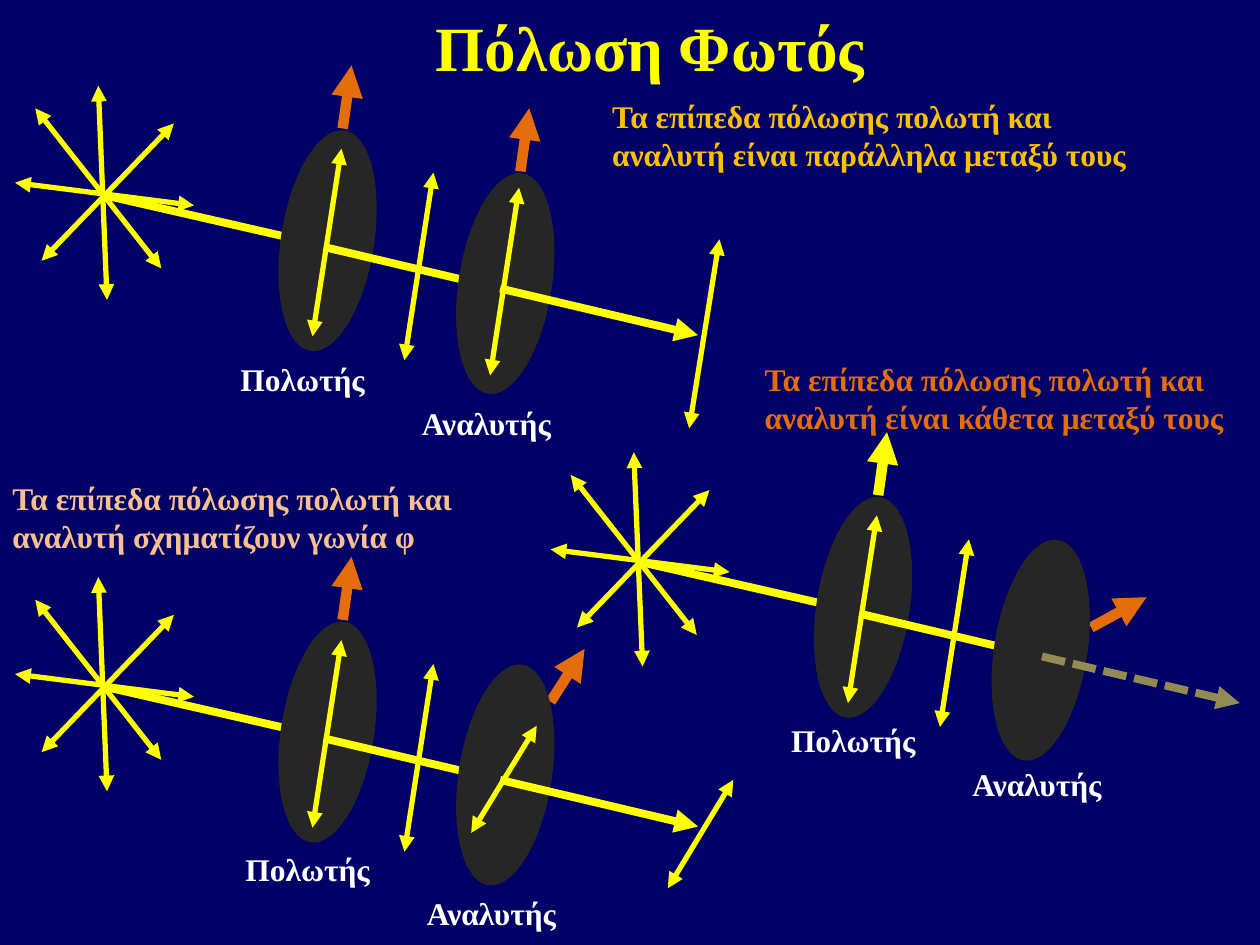
"""Build a slide on light polarization with three polarizer and analyzer setups."""
from lxml.etree import SubElement
from pptx import Presentation
from pptx.dml.color import RGBColor
from pptx.enum.dml import MSO_LINE
from pptx.enum.shapes import MSO_CONNECTOR, MSO_SHAPE
from pptx.enum.text import MSO_AUTO_SIZE, PP_ALIGN
from pptx.oxml.ns import qn
from pptx.util import Cm, Pt

NAVY = RGBColor(0x00, 0x00, 0x66)
YELLOW = RGBColor(0xFF, 0xFF, 0x00)
GOLD = RGBColor(0xFF, 0xC0, 0x00)
ORANGE = RGBColor(0xE4, 0x6C, 0x0A)
PEACH = RGBColor(0xFA, 0xC0, 0x90)
OLIVE = RGBColor(0x94, 0x8A, 0x54)
CHARCOAL = RGBColor(0x26, 0x26, 0x26)
WHITE = RGBColor(0xFF, 0xFF, 0xFF)
FONT = "Times New Roman"
CM_PER_UNIT = 2.54

TITLE = ("Πόλωση Φωτός", 0.91, -0.03, 8.5, 0.63)
CAPTIONS = [
    ("Τα επίπεδα πόλωσης πολωτή και αναλυτή είναι παράλληλα μεταξύ τους", 4.76, 0.72, 4.39, GOLD),
    ("Τα επίπεδα πόλωσης πολωτή και αναλυτή είναι κάθετα μεταξύ τους", 5.97, 2.81, 4.07, ORANGE),
    ("Τα επίπεδα πόλωσης πολωτή και αναλυτή σχηματίζουν γωνία φ", 0, 3.75, 3.87, PEACH),
]
LABELS = [("Πολωτής", 1.81, 2.81, 1.2), ("Αναλυτής", 3.25, 3.16, 1.24)]

RAYS = [
    (0.12, 1.45, 1.54, 1.63),
    (0.28, 0.86, 1.28, 2.13),
    (0.33, 2.07, 1.38, 0.98),
    (0.78, 0.68, 0.85, 2.38),
]
SOURCE_BEAM = (0.83, 1.55, 2.58, 1.95)
MIDDLE_BEAM = (2.57, 1.96, 4.14, 2.33)
FINAL_BEAM = (3.97, 2.29, 5.54, 2.66)
POLARIZER_AXIS = (2.72, 1.02, 2.79, 0.52)
POLARIZER_WAVE = (2.71, 1.18, 2.48, 2.67)
MIDDLE_WAVE = (3.44, 1.37, 3.21, 2.86)
POLARIZER_CENTER = (2.6, 1.91)
ANALYZER_CENTER = (4.01, 2.25)
DISC_SIZE = (0.74, 1.77)
DISC_TILT = 8.8

SETUPS = [
    {
        "origin": (0, 0), "label_shift": (0, 0), "axis_color": ORANGE,
        "analyzer_axis": (4.13, 1.36, 4.2, 0.86),
        "final_beam": FINAL_BEAM, "beam_format": {"color": YELLOW},
        "waves": [(4.12, 1.49, 3.89, 2.98), (5.71, 1.9, 5.47, 3.4)],
    },
    {
        "origin": (0, 3.9), "label_shift": (0.04, -0.01), "axis_color": ORANGE,
        "analyzer_axis": (4.37, 1.67, 4.64, 1.25),
        "final_beam": FINAL_BEAM, "beam_format": {"color": YELLOW},
        "waves": [(4.26, 1.86, 3.74, 2.71), (5.82, 2.29, 5.3, 3.15)],
    },
    {
        "origin": (4.25, 2.91), "label_shift": (0.12, -0.05), "axis_color": YELLOW,
        "analyzer_axis": (4.41, 2.07, 4.85, 1.83),
        "final_beam": (4.02, 2.3, 5.59, 2.67),
        "beam_format": {"color": OLIVE, "dash": MSO_LINE.SQUARE_DOT},
        "waves": [],
    },
]


def length(units):
    return Cm(units * CM_PER_UNIT)


def apply(target, values):
    for name, value in values.items():
        setattr(target, name, value)


def add_text(page, text, left, top, width, height, color, size=18, **frame_format):
    box = page.shapes.add_textbox(*map(length, (left, top, width, height)))
    apply(box.text_frame, {"word_wrap": True, **frame_format})
    para = box.text_frame.paragraphs[0]
    span = para.add_run()
    span.text = text
    apply(span.font, {"name": FONT, "size": Pt(size), "bold": True})
    span.font.color.rgb = color
    return para


def add_arrow(page, ends, origin, width, color=YELLOW, both=False, dash=None):
    x, y = origin
    x1, y1, x2, y2 = ends
    points = map(length, (x + x1, y + y1, x + x2, y + y2))
    arrow = page.shapes.add_connector(MSO_CONNECTOR.STRAIGHT, *points)
    arrow.line.color.rgb = color
    apply(arrow.line, {"width": Pt(width), "dash_style": dash})
    outline = arrow.line._get_or_add_ln()
    for tag in ("a:headEnd", "a:tailEnd") if both else ("a:tailEnd",):
        SubElement(outline, qn(tag), type="triangle")
    SubElement(arrow._element.spPr, qn("a:effectLst"))


def add_disc(page, center, origin):
    corner = [o + c - s / 2 for o, c, s in zip(origin, center, DISC_SIZE)]
    disc = page.shapes.add_shape(MSO_SHAPE.OVAL, *map(length, (*corner, *DISC_SIZE)))
    disc.rotation = DISC_TILT
    disc.shadow.inherit = False
    disc.fill.solid()
    disc.fill.fore_color.rgb = CHARCOAL
    disc.line.fill.background()


def add_setup(page, setup):
    origin = setup["origin"]
    for ray in RAYS:
        add_arrow(page, ray, origin, 3, both=True)
    add_arrow(page, SOURCE_BEAM, origin, 4.5)
    add_arrow(page, POLARIZER_AXIS, origin, 6, setup["axis_color"])
    add_disc(page, POLARIZER_CENTER, origin)
    add_arrow(page, MIDDLE_BEAM, origin, 4.5)
    add_arrow(page, setup["analyzer_axis"], origin, 6, ORANGE)
    add_disc(page, ANALYZER_CENTER, origin)
    add_arrow(page, setup["final_beam"], origin, 4.5, **setup["beam_format"])
    for wave in [POLARIZER_WAVE, MIDDLE_WAVE, *setup["waves"]]:
        add_arrow(page, wave, origin, 3, both=True)
    shift = [o + s for o, s in zip(origin, setup["label_shift"])]
    for text, left, top, width in LABELS:
        add_text(page, text, shift[0] + left, shift[1] + top, width, 0.4, WHITE,
                 word_wrap=False, auto_size=MSO_AUTO_SIZE.SHAPE_TO_FIT_TEXT)


def main():
    deck = Presentation()
    apply(deck, {"slide_width": length(10), "slide_height": length(7.5)})
    page = deck.slides.add_slide(deck.slide_layouts[6])
    page.background.fill.solid()
    page.background.fill.fore_color.rgb = NAVY
    title = add_text(page, *TITLE, YELLOW, size=36, margin_top=length(0.1))
    title.alignment = PP_ALIGN.CENTER
    for text, left, top, width, color in CAPTIONS:
        add_text(page, text, left, top, width, 0.71, color,
                 auto_size=MSO_AUTO_SIZE.SHAPE_TO_FIT_TEXT)
    for setup in SETUPS:
        add_setup(page, setup)
    deck.save("out.pptx")


if __name__ == "__main__":
    main()
